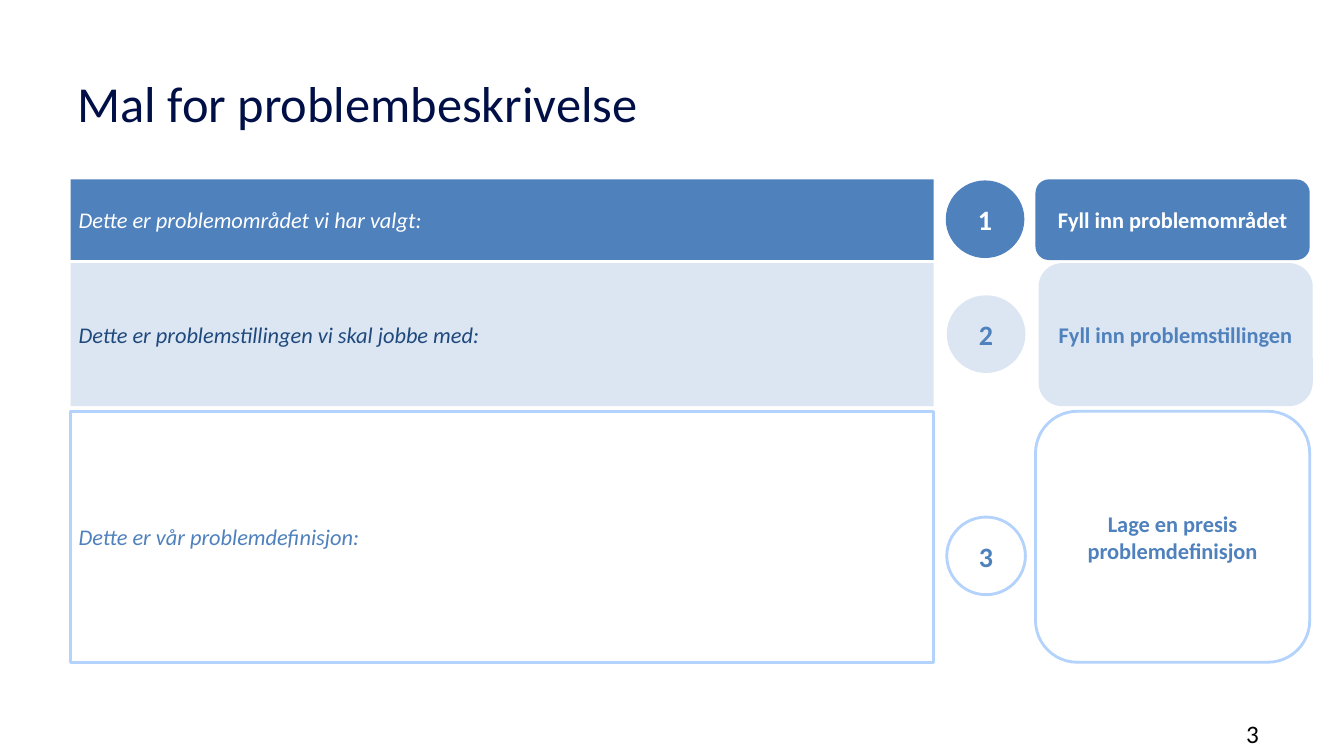
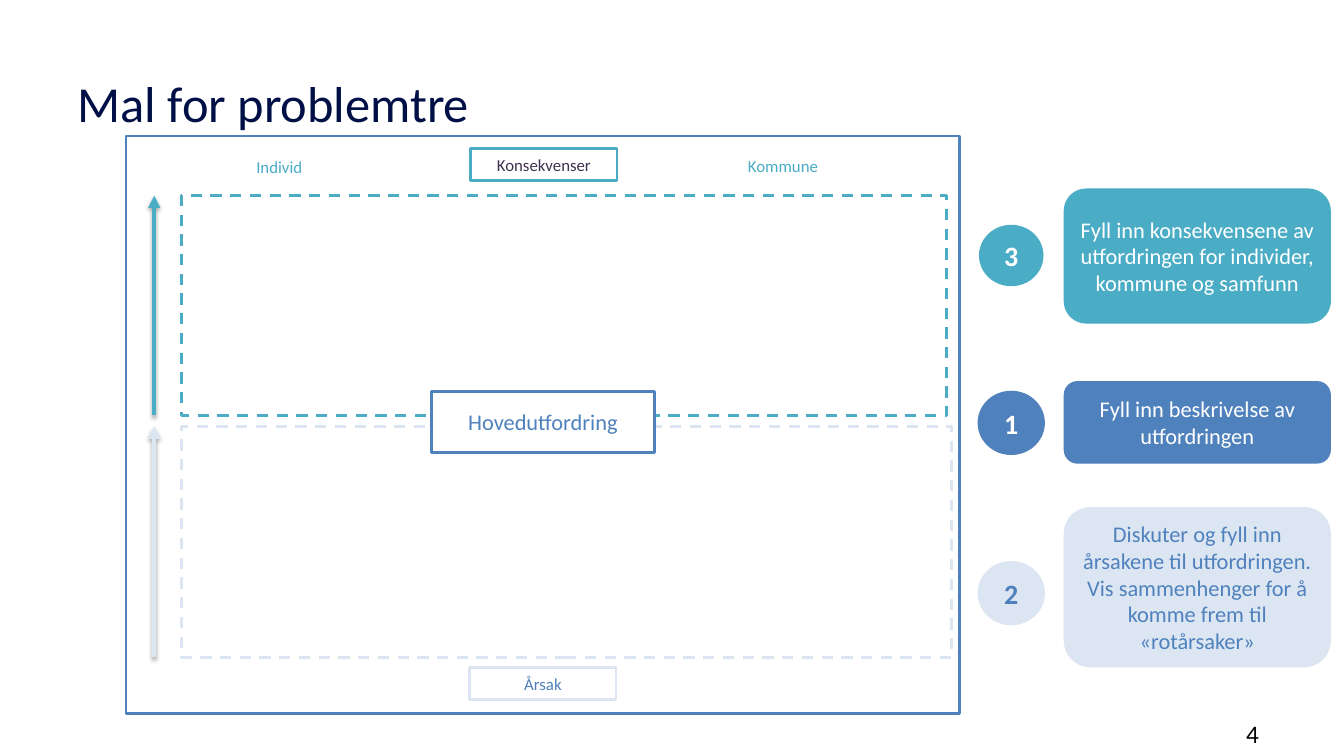
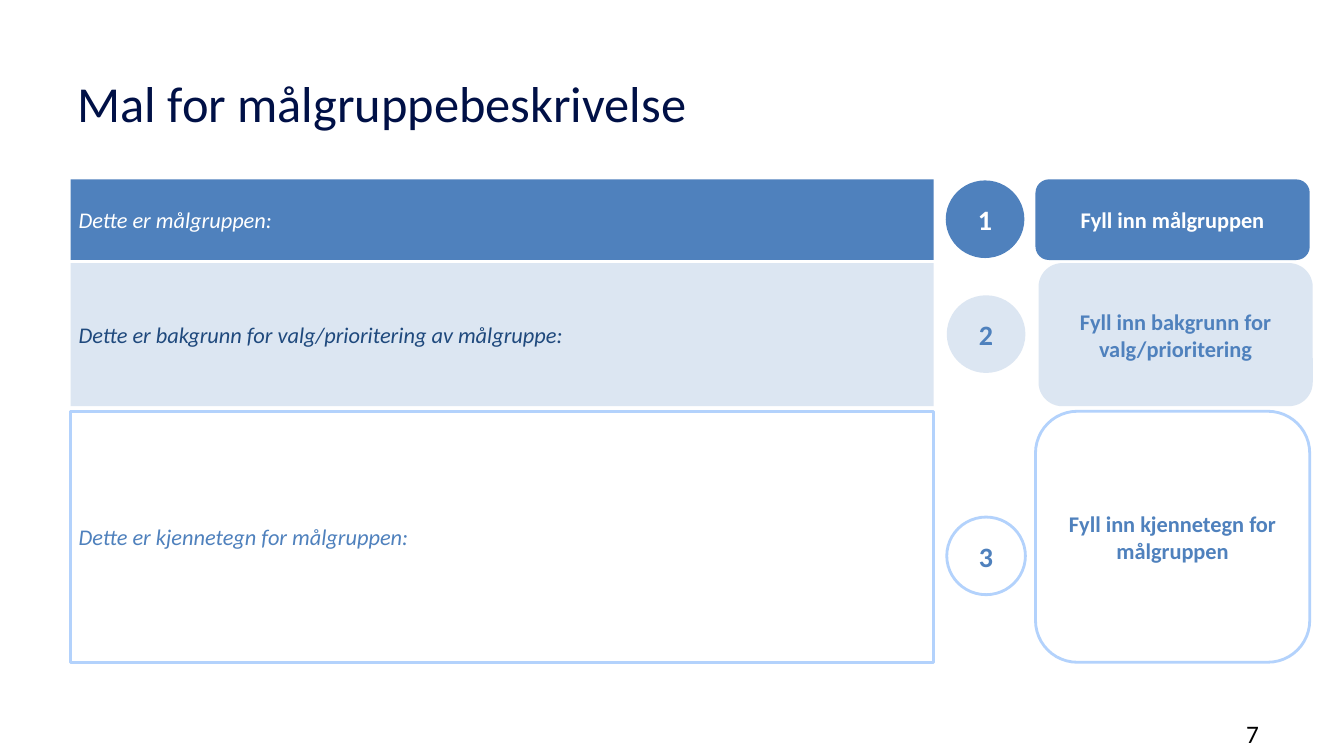
"""Build three workshop template slides: problem, problem tree and target group."""
from lxml import etree
from pptx import Presentation
from pptx.dml.color import RGBColor
from pptx.enum.dml import MSO_LINE
from pptx.enum.shapes import MSO_CONNECTOR, MSO_SHAPE
from pptx.enum.text import MSO_ANCHOR, PP_ALIGN
from pptx.oxml import parse_xml
from pptx.oxml.ns import nsdecls, qn
from pptx.util import Pt

PX = 9144
FONT = "Calibri"
NAVY = RGBColor(0x00, 0x10, 0x46)
BLUE = RGBColor(0x4F, 0x81, 0xBD)
DARK_BLUE = RGBColor(0x1F, 0x49, 0x7D)
PALE = RGBColor(0xDC, 0xE6, 0xF2)
SKY = RGBColor(0xB3, 0xD2, 0xFC)
TEAL = RGBColor(0x4B, 0xAC, 0xC6)
PURPLE = RGBColor(0x40, 0x31, 0x52)
WHITE = RGBColor(0xFF, 0xFF, 0xFF)
BLACK = RGBColor(0x00, 0x00, 0x00)

FORM_ROWS = [
    dict(top=178, height=80, circle=(938, 179), card_left=1027,
         fill=BLUE, line=None, label=WHITE, accent=WHITE),
    dict(top=261, height=142, circle=(939, 293), card_left=1030,
         fill=PALE, line=None, label=DARK_BLUE, accent=BLUE),
    dict(top=408, height=249, circle=(939, 513), card_left=1027,
         fill=WHITE, line=SKY, label=BLUE, accent=BLUE),
]


def px(*lengths):
    return [n * PX for n in lengths]


def put_text(tf, text, size=16, color=BLUE, bold=False, italic=False,
             align=PP_ALIGN.CENTER, anchor=MSO_ANCHOR.MIDDLE, inset=(8, 4)):
    tf.word_wrap = True
    tf.vertical_anchor = anchor
    tf.margin_left = tf.margin_right = inset[0] * PX
    tf.margin_top = tf.margin_bottom = inset[1] * PX
    p = tf.paragraphs[0]
    p.alignment = align
    r = p.add_run()
    r.text = text
    r.font.name = FONT
    r.font.size = Pt(size)
    r.font.bold = bold
    r.font.italic = italic
    r.font.color.rgb = color


def add_box(slide, at, text=None, kind=MSO_SHAPE.RECTANGLE, fill=WHITE,
            line=None, dashed=False, **fmt):
    sp = slide.shapes.add_shape(kind, *px(*at))
    sp.shadow.inherit = False
    sp.fill.solid()
    sp.fill.fore_color.rgb = fill
    if line is None:
        sp.line.fill.background()
    else:
        sp.line.color.rgb = line
        sp.line.width = Pt(2)
    if dashed:
        sp.line.dash_style = MSO_LINE.DASH
    if text:
        put_text(sp.text_frame, text, **fmt)


def add_circle(slide, at, number, **fmt):
    add_box(slide, at, number, MSO_SHAPE.OVAL, size=20, bold=True, **fmt)


def add_card(slide, at, text, **fmt):
    add_box(slide, at, text, MSO_SHAPE.ROUNDED_RECTANGLE, **fmt)


def add_up_arrow(slide, x, bottom, top, color):
    cn = slide.shapes.add_connector(MSO_CONNECTOR.STRAIGHT, *px(x, bottom, x, top))
    cn.line.color.rgb = color
    cn.line.width = Pt(3)
    etree.SubElement(cn.line._get_or_add_ln(), qn("a:tailEnd"), type="triangle")
    cn._element.spPr.append(parse_xml(
        f'<a:effectLst {nsdecls("a")}><a:outerShdw blurRad="{Pt(3.1)}" '
        f'dist="{Pt(1.8)}" dir="5400000" rotWithShape="0"><a:srgbClr val="{BLACK}">'
        '<a:alpha val="35000"/></a:srgbClr></a:outerShdw></a:effectLst>'))


def new_slide(prs, title, number):
    slide = prs.slides.add_slide(prs.slide_layouts[5])
    sp = slide.shapes.title
    sp.left, sp.top, sp.width, sp.height = px(67, 40, 1200, 124)
    put_text(sp.text_frame, title, size=36, color=NAVY, align=PP_ALIGN.LEFT,
             inset=(10, 5))
    tb = slide.shapes.add_textbox(*px(1226, 708, 69, 12))
    put_text(tb.text_frame, number, size=18, color=BLACK, align=PP_ALIGN.LEFT,
             anchor=MSO_ANCHOR.TOP, inset=(10, 5))
    return slide


def form_slide(prs, title, number, entries):
    slide = new_slide(prs, title, number)
    for i, (row, (label, task)) in enumerate(zip(FORM_ROWS, entries), 1):
        top, height = row["top"], row["height"]
        look = dict(fill=row["fill"], line=row["line"])
        add_box(slide, (70, top, 856, height), label, color=row["label"],
                italic=True, align=PP_ALIGN.LEFT, **look)
        add_circle(slide, (*row["circle"], 78, 77), str(i),
                   color=row["accent"], **look)
        add_card(slide, (row["card_left"], top, 272, height), task,
                 color=row["accent"], bold=True, **look)


def tree_slide(prs, title, number):
    slide = new_slide(prs, title, number)
    add_box(slide, (125, 135, 827, 573), line=BLUE)
    for top, width, height, color in [(194, 759, 218, TEAL), (423, 764, 229, PALE)]:
        add_box(slide, (180, top, width, height), line=color, dashed=True)
        add_up_arrow(slide, 153, top + height, top, color)
    add_box(slide, (428, 388, 221, 61), "Hovedutfordring", line=BLUE)

    for at, text, line, color in [
            ((467, 147, 145, 32), "Konsekvenser", TEAL, PURPLE),
            ((466, 662, 145, 32), "Årsak", PALE, BLUE),
            ((227, 158, 100, 16), "Individ", WHITE, TEAL),
            ((722, 158, 109, 13), "Kommune", WHITE, TEAL)]:
        add_box(slide, at, text, line=line, size=12, color=color)

    for step, circle_top, top, height, fill, line, color, task in [
            ("3", 223, 187, 134, TEAL, None, WHITE,
             "Fyll inn konsekvensene av utfordringen for individer, "
             "kommune og samfunn"),
            ("1", 389, 378, 82, BLUE, BLUE, WHITE,
             "Fyll inn beskrivelse av utfordringen"),
            ("2", 558, 503, 159, PALE, PALE, BLUE,
             "Diskuter og fyll inn årsakene til utfordringen. Vis "
             "sammenhenger for å komme frem til «rotårsaker»")]:
        add_circle(slide, (971, circle_top, 64, 61), step, fill=fill, line=line,
                   color=color)
        add_card(slide, (1055, top, 265, height), task, fill=fill, color=color)


def main():
    prs = Presentation()
    prs.slide_width, prs.slide_height = px(1333, 750)
    form_slide(prs, "Mal for problembeskrivelse", "3", [
        ("Dette er problemområdet vi har valgt:", "Fyll inn problemområdet"),
        ("Dette er problemstillingen vi skal jobbe med:",
         "Fyll inn problemstillingen"),
        ("Dette er vår problemdefinisjon:", "Lage en presis problemdefinisjon"),
    ])
    tree_slide(prs, "Mal for problemtre", "4")
    form_slide(prs, "Mal for målgruppebeskrivelse", "7", [
        ("Dette er målgruppen:", "Fyll inn målgruppen"),
        ("Dette er bakgrunn for valg/prioritering av målgruppe:",
         "Fyll inn bakgrunn for valg/prioritering"),
        ("Dette er kjennetegn for målgruppen:",
         "Fyll inn kjennetegn for målgruppen"),
    ])
    prs.save("out.pptx")


if __name__ == "__main__":
    main()
